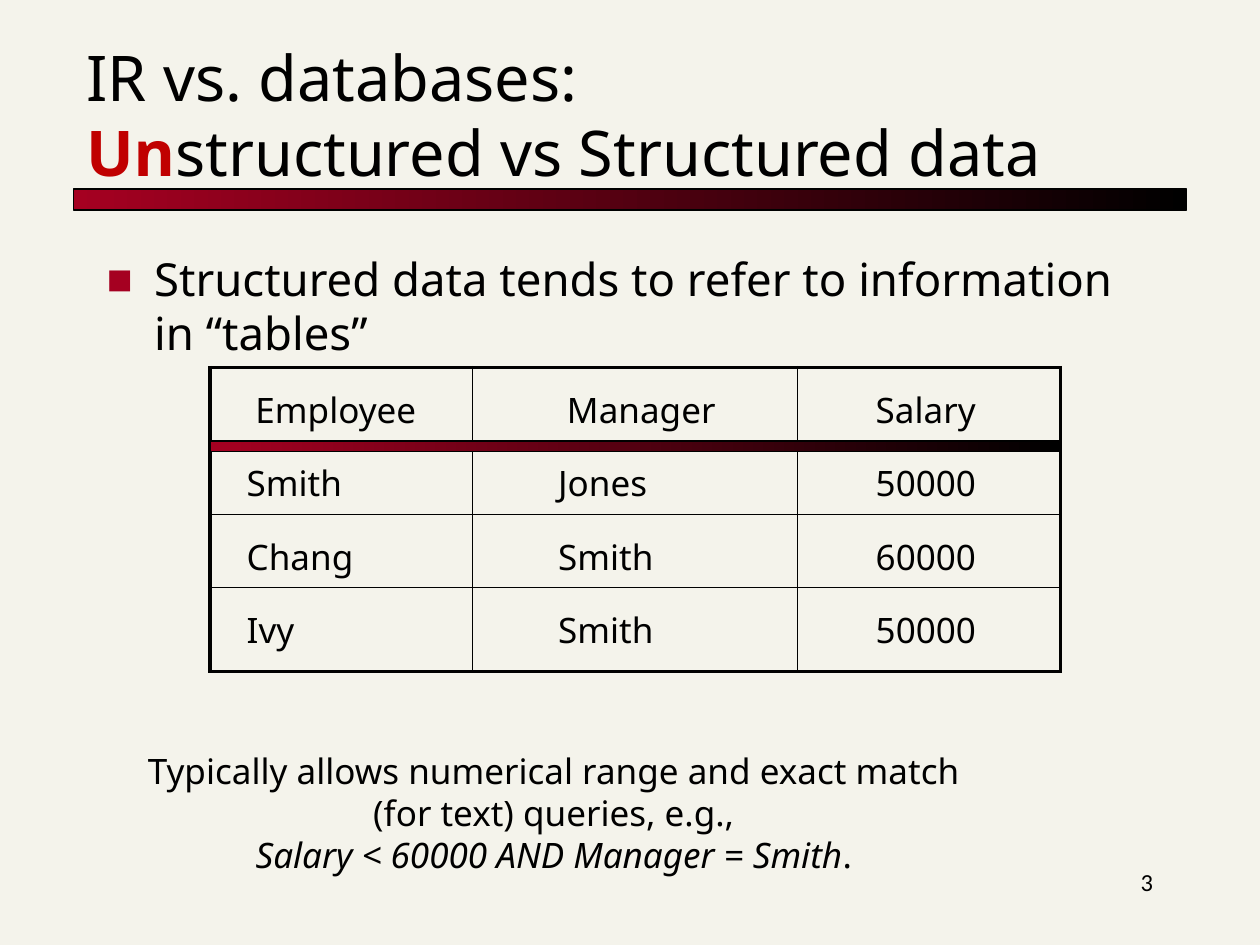
"""Build the slide on unstructured versus structured data."""
import pptx
import pptx.dml.color
import pptx.enum.shapes
import pptx.enum.text
import pptx.oxml
import pptx.oxml.ns
import pptx.util

Pt = pptx.util.Pt
ALIGN = pptx.enum.text.PP_ALIGN
ANCHOR = pptx.enum.text.MSO_ANCHOR
COLORS = {"paper": "F4F3EB", "ink": "000000", "crimson": "A50021", "accent": "C00000"}
ROWS = [
    ("Employee", "Manager", "Salary"),
    ("Smith", "Jones", "50000"),
    ("Chang", "Smith", "60000"),
    ("Ivy", "Smith", "50000"),
]
COLUMN_WIDTHS = (150, 186, 150)
COLUMN_INDENTS = (21, 49, 44.5)
ROW_HEIGHTS = (42, 42, 42, 48)
TABLE_LEFT, TABLE_TOP = 120, 210


def rgb(name):
    """Return the named colour."""
    return pptx.dml.color.RGBColor.from_string(COLORS[name])


def apply_format(target, values):
    """Set each attribute of the target from a dict."""
    for name, value in values.items():
        setattr(target, name, value)


def add_span(para, text, size, color="ink", **values):
    """Append a formatted run to a paragraph."""
    span = para.add_run()
    span.text = text
    apply_format(span.font, {"name": "Noto Sans", "size": Pt(size), **values})
    span.font.color.rgb = rgb(color)


def add_box(page, left, top, width, height, **values):
    """Add a wrapping text box and return its text frame."""
    box = page.shapes.add_textbox(Pt(left), Pt(top), Pt(width), Pt(height))
    apply_format(box.text_frame, {"word_wrap": True, **values})
    return box.text_frame


def add_bar(page, left, top, width, height):
    """Add a horizontal bar that fades from crimson to black."""
    bar = page.shapes.add_shape(
        pptx.enum.shapes.MSO_SHAPE.RECTANGLE, Pt(left), Pt(top), Pt(width), Pt(height))
    bar.shadow.inherit = False
    bar.fill.gradient()
    bar.fill.gradient_angle = 0
    for stop, color, position in zip(bar.fill.gradient_stops, ("crimson", "ink"), (0, 1)):
        stop.color.rgb = rgb(color)
        stop.position = position
    bar.line.color.rgb = rgb("ink")
    bar.line.width = Pt(0.75)


def add_title(page):
    """Fill and place the two-line title."""
    title = page.shapes.title
    apply_format(title, {"left": Pt(42), "top": Pt(30), "width": Pt(636), "height": Pt(78)})
    apply_format(title.text_frame, {
        "vertical_anchor": ANCHOR.BOTTOM, "word_wrap": True, "margin_bottom": 0,
        "auto_size": pptx.enum.text.MSO_AUTO_SIZE.NONE})
    para = title.text_frame.paragraphs[0]
    apply_format(para, {"alignment": ALIGN.LEFT, "line_spacing": Pt(43), "space_before": Pt(0)})
    add_span(para, "IR vs. databases:", 36)
    para.add_line_break()
    add_span(para, "Un", 36, "accent", bold=True)
    add_span(para, "structured vs Structured data", 36, bold=False)


def add_bullet(page):
    """Add the bulleted statement."""
    para = add_box(page, 54, 138, 612, 72, margin_top=Pt(5.5)).paragraphs[0]
    para.line_spacing = Pt(31)
    properties = para._p.get_or_add_pPr()
    properties.set("marL", str(Pt(27)))
    properties.set("indent", str(-Pt(27)))
    namespace = pptx.oxml.ns.nsdecls("a")
    for markup in (
        f'<a:buClr {namespace}><a:srgbClr val="{COLORS["crimson"]}"/></a:buClr>',
        f'<a:buSzPct {namespace} val="60000"/>',
        f'<a:buFont {namespace} typeface="Noto Sans"/>',
        f'<a:buChar {namespace} char="■"/>',
    ):
        properties.append(pptx.oxml.parse_xml(markup))
    add_span(para, "Structured data tends to refer to information in “tables”", 26)


def set_border(cell, side, width):
    """Draw one side of a cell as a solid line."""
    cell._tc.get_or_add_tcPr().append(pptx.oxml.parse_xml(
        f'<a:ln{side} {pptx.oxml.ns.nsdecls("a")} w="{Pt(width)}"><a:solidFill>'
        f'<a:srgbClr val="{COLORS["ink"]}"/></a:solidFill></a:ln{side}>'))


def format_cell(cell, row, column):
    """Write, border and align one cell of the employee table."""
    last_row, last_column = len(ROWS) - 1, len(COLUMN_WIDTHS) - 1
    outer = {"L": column == 0, "R": column == last_column, "T": row == 0, "B": row == last_row}
    for side, is_outer in outer.items():
        set_border(cell, side, 2 if is_outer else 0.75)
    cell.fill.background()
    header_shift = 5 if row == 0 and column < last_column else 0
    apply_format(cell, {
        "vertical_anchor": ANCHOR.MIDDLE, "margin_right": 0, "margin_bottom": 0,
        "margin_left": Pt(COLUMN_INDENTS[column] + header_shift),
        "margin_top": Pt(0 if row == last_row else 6)})
    add_span(cell.text_frame.paragraphs[0], ROWS[row][column], 20)


def add_employee_table(page):
    """Add the employee table and the bar below its header."""
    width = sum(COLUMN_WIDTHS)
    table = page.shapes.add_table(
        len(ROWS), len(COLUMN_WIDTHS), Pt(TABLE_LEFT), Pt(TABLE_TOP),
        Pt(width), Pt(sum(ROW_HEIGHTS))).table
    apply_format(table, {"first_row": False, "horz_banding": False})
    for column, column_width in enumerate(COLUMN_WIDTHS):
        table.columns[column].width = Pt(column_width)
    for row, height in enumerate(ROW_HEIGHTS):
        table.rows[row].height = Pt(height)
        for column in range(len(COLUMN_WIDTHS)):
            format_cell(table.cell(row, column), row, column)
    add_bar(page, TABLE_LEFT, TABLE_TOP + ROW_HEIGHTS[0], width, 6)


def add_query_note(page):
    """Add the centred note with its sample query."""
    frame = add_box(page, 66, 424.5, 501, 80, vertical_anchor=ANCHOR.MIDDLE)
    lines = (
        [("Typically allows numerical range and exact match", False)],
        [("(for text) queries, e.g.,", False)],
        [("Salary < 60000 AND Manager = Smith", True), (".", False)],
    )
    for index, spans in enumerate(lines):
        para = frame.add_paragraph() if index else frame.paragraphs[0]
        apply_format(para, {"alignment": ALIGN.CENTER, "line_spacing": Pt(24)})
        for text, italic in spans:
            add_span(para, text, 20, italic=italic)


def add_page_number(page):
    """Add the page number at the lower right."""
    para = add_box(page, 516, 492, 150, 36).paragraphs[0]
    para.alignment = ALIGN.RIGHT
    add_span(para, "3", 14, name="Calibri")


def main():
    """Build and save the deck."""
    deck = pptx.Presentation()
    apply_format(deck, {"slide_width": Pt(720), "slide_height": Pt(540)})
    page = deck.slides.add_slide(deck.slide_layouts[5])
    page.background.fill.solid()
    page.background.fill.fore_color.rgb = rgb("paper")
    add_bar(page, 42, 108, 636, 12)
    add_title(page)
    add_bullet(page)
    add_page_number(page)
    add_employee_table(page)
    add_query_note(page)
    deck.save("out.pptx")


if __name__ == "__main__":
    main()
